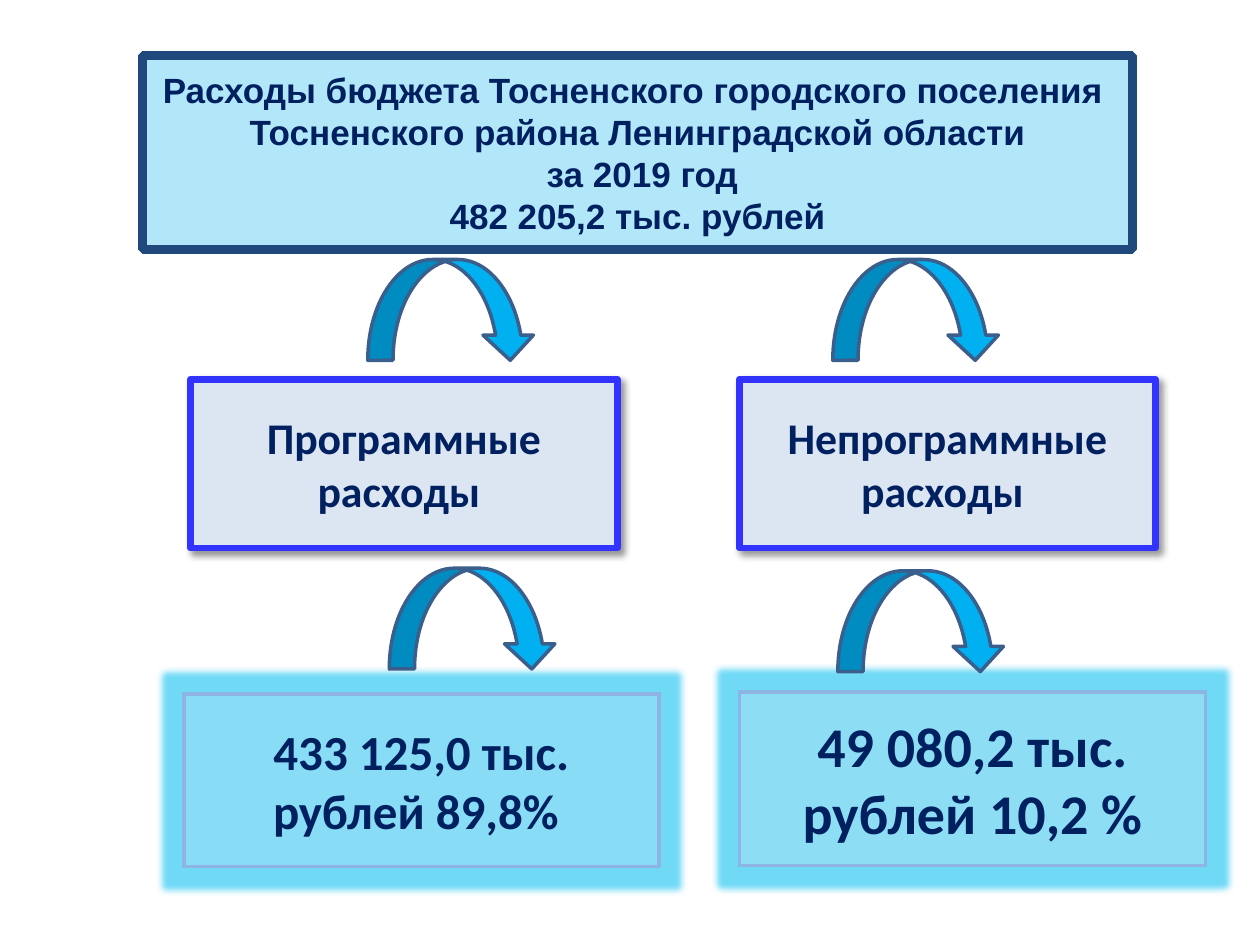
from lxml.etree import SubElement
from pptx import Presentation
from pptx.dml.color import RGBColor
from pptx.enum.shapes import MSO_SHAPE as Shape
from pptx.enum.text import MSO_ANCHOR as Anchor, PP_ALIGN as Align
from pptx.oxml.ns import qn
from pptx.util import Pt

NAVY, SKY = "002060", "00B0F0"
SHADOW = ("outerShdw", {"blurRad": Pt(4), "dist": Pt(3), "dir": 45 * 60000}, "000000", 40)
GLOW = ("glow", {"rad": Pt(8)}, "70DAF6", 100)

TITLE = [
    "Расходы бюджета Тосненского городского поселения ",
    "Тосненского района Ленинградской области",
    " за 2019 год",
    "482 205,2 тыс. рублей",
]
# Place in points (left, top, width, height), text, size
CATEGORIES = [
    ((108.7, 216.7, 244.1, 96.5), "Программные расходы ", 25),
    ((422.6, 216.7, 237.6, 96.5), "Непрограммные расходы ", 25),
]
# Place, text, size, fill opacity in percent
AMOUNTS = [
    ((105.1, 396.7, 271.4, 98.6), "433 125,0 тыс. рублей 89,8% ", 28, 24),
    ((422.6, 395.3, 266.4, 99.4), "49 080,2 тыс. рублей 10,2 %", 32, 27),
]
ARROW_SIZE = (95.8, 57.6)
ARROWS = [(210.2, 148.3), (475.9, 148.3), (222.5, 324.7), (478.8, 326.2)]


def rgb(value):
    return RGBColor.from_string(value)


def set_opacity(color, percent):
    SubElement(color, qn("a:alpha"), val=str(percent * 1000))


def add_effect(shape, effect):
    tag, settings, color, opacity = effect
    effects = shape._element.spPr.find(qn("a:effectLst"))
    node = SubElement(effects, qn("a:" + tag), {key: str(int(value)) for key, value in settings.items()})
    set_opacity(SubElement(node, qn("a:srgbClr"), val=color), opacity)


def add_shape(page, kind, place, fill, line, weight, opacity=100, join="round"):
    shape = page.shapes.add_shape(kind, *map(Pt, place))
    shape.shadow.inherit = False
    shape.fill.solid()
    shape.fill.fore_color.rgb = rgb(fill)
    if opacity < 100:
        set_opacity(shape._element.spPr.find(qn("a:solidFill"))[0], opacity)
    shape.line.color.rgb = rgb(line)
    shape.line.width = Pt(weight)
    SubElement(shape._element.spPr.find(qn("a:ln")), qn("a:" + join))
    return shape


def write(shape, lines, size, font="Calibri"):
    frame = shape.text_frame
    frame.word_wrap = True
    frame.vertical_anchor = Anchor.MIDDLE
    frame.text = "\n".join(lines)
    for paragraph in frame.paragraphs:
        paragraph.alignment = Align.CENTER
        for span in paragraph.runs:
            span.font.name = font
            span.font.size = Pt(size)
            span.font.bold = True
            span.font.color.rgb = rgb(NAVY)


def main():
    deck = Presentation()
    deck.slide_width, deck.slide_height = Pt(720), Pt(540)
    page = deck.slides.add_slide(deck.slide_layouts[6])

    header = add_shape(page, Shape.RECTANGLE, (81.4, 31.7, 565.9, 110.9), SKY, "1F497D", 5, 30, "bevel")
    write(header, TITLE, 20, "Arial")

    for place, text, size in CATEGORIES:
        box = add_shape(page, Shape.RECTANGLE, place, "DCE6F2", "3333FF", 4)
        add_effect(box, SHADOW)
        write(box, [text], size)

    for place, text, size, opacity in AMOUNTS:
        box = add_shape(page, Shape.RECTANGLE, place, "DCE6F2", "8EB4E3", 2, opacity, "miter")
        add_effect(box, GLOW)
        write(box, [text], size)

    for corner in ARROWS:
        add_shape(page, Shape.CURVED_DOWN_ARROW, corner + ARROW_SIZE, SKY, "3A5F8C", 2)

    deck.save("out.pptx")


if __name__ == "__main__":
    main()
